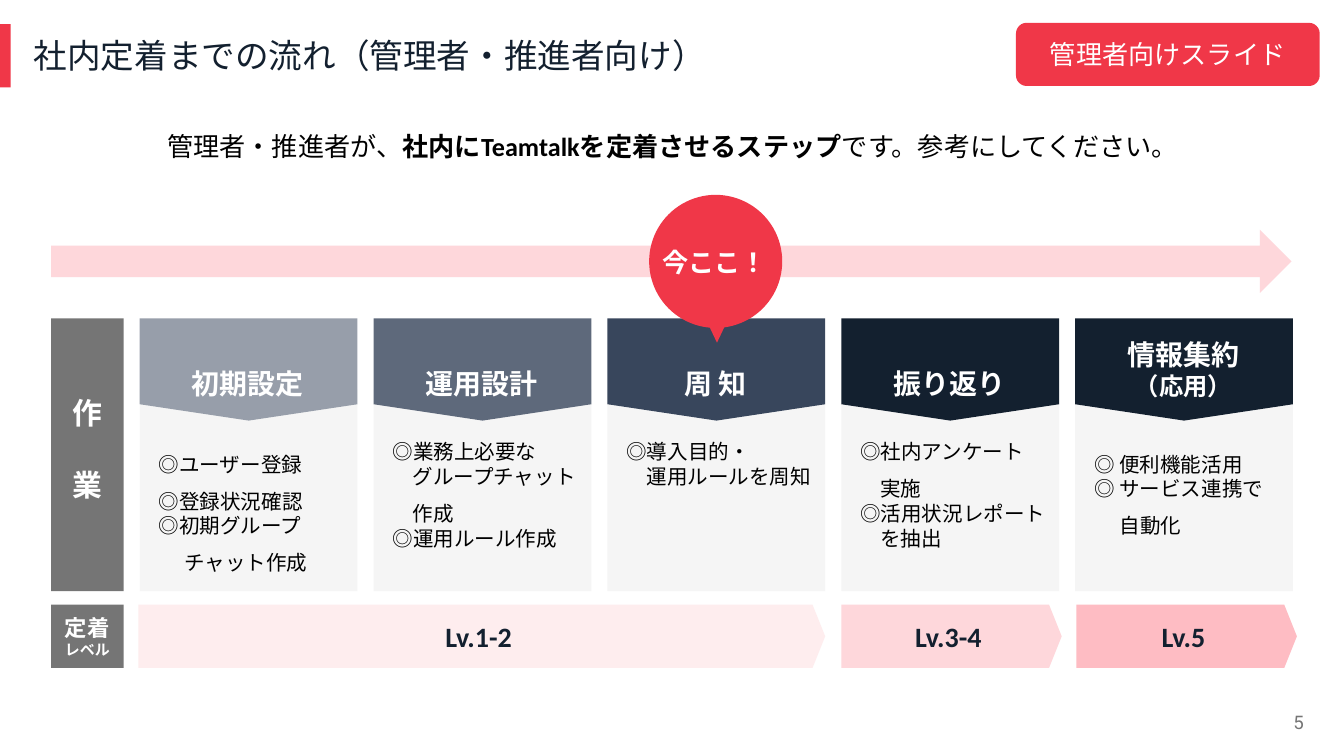
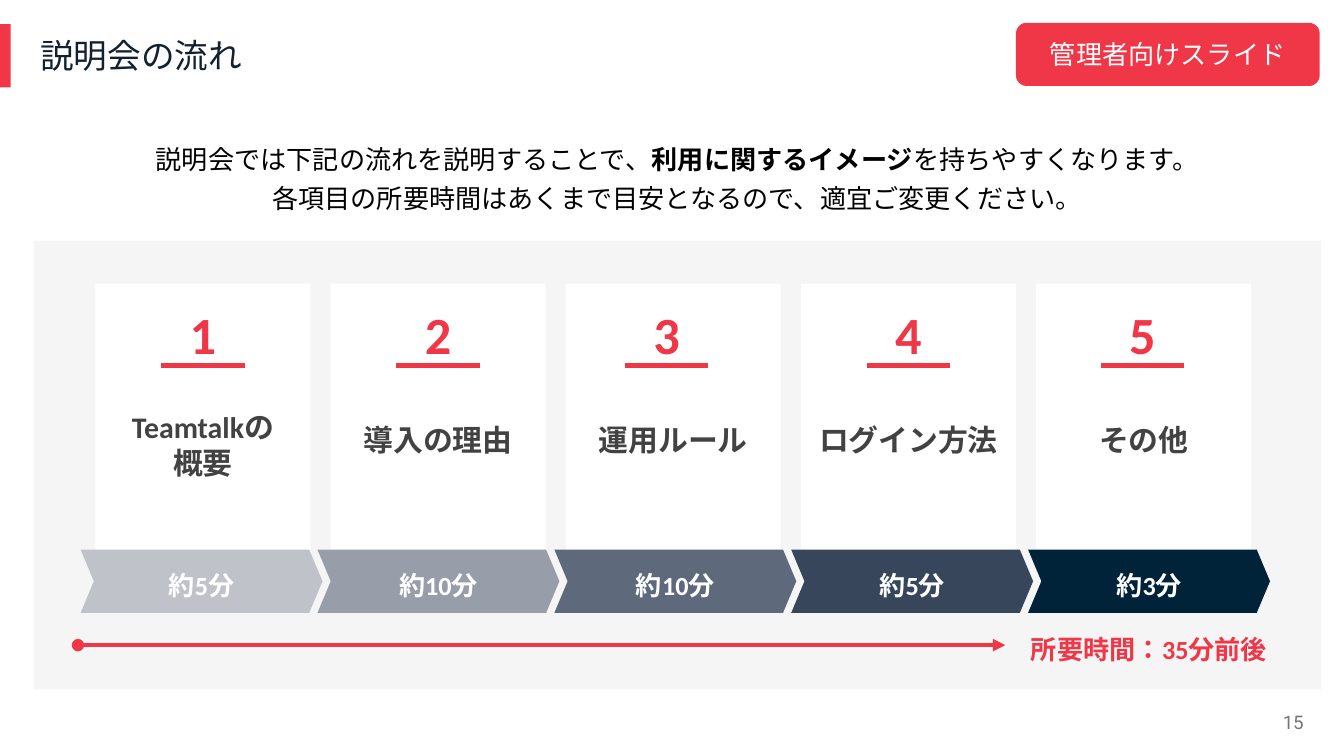
from copy import deepcopy
from dataclasses import dataclass

from lxml.etree import SubElement
from pptx import Presentation
from pptx.dml.color import RGBColor
from pptx.enum.lang import MSO_LANGUAGE_ID as Language
from pptx.enum.shapes import MSO_CONNECTOR as Connector, MSO_SHAPE as Shape
from pptx.enum.text import MSO_ANCHOR as Anchor, PP_ALIGN as Align
from pptx.oxml.ns import qn
from pptx.util import Inches, Pt


@dataclass(frozen=True)
class Theme:
    font: str = "Calibri"
    number_font: str = "Roboto"
    red: str = "F03748"
    navy: str = "13202F"
    deep_navy: str = "002339"
    slate: str = "38465C"
    steel: str = "5E697B"
    mist: str = "979EAA"
    pale: str = "BFC2C8"
    gray: str = "757575"
    charcoal: str = "424242"
    panel: str = "F5F5F5"
    pink_light: str = "FEEDEE"
    pink: str = "FED7DB"
    pink_deep: str = "FEBCC3"
    white: str = "FFFFFF"
    black: str = "000000"
    title: float = 18
    label: float = 16
    heading: float = 15
    body: float = 14
    sub_heading: float = 13
    level: float = 12
    task: float = 11
    page_number: float = 10
    small: float = 8
    number: float = 28


THEME = Theme()
EVEN = (0.1, 0.1, 0.1, 0.1)
FLAT = (0.1, 0.05, 0.1, 0.05)
NONE = (0, 0, 0, 0)


@dataclass(frozen=True)
class Line:
    spans: tuple
    spacing: float = 1
    indent: float = 0
    hanging: float = 0
    before: float = 0


@dataclass(frozen=True)
class Span:
    text: str
    bold: bool = None
    size: float = None


def add_span(para, text, size, color, bold, font):
    for index, piece in enumerate(text.split("\n")):
        if index:
            para.add_line_break()
            para._p[-1].append(deepcopy(para._p[-2].find(qn("a:rPr"))))
        if not piece:
            continue
        span = para.add_run()
        span.text = piece
        span.font.size = Pt(size)
        span.font.bold = bold
        span.font.name = font
        span.font.language_id = Language.JAPANESE
        span.font.color.rgb = RGBColor.from_string(color)
        SubElement(span._r.rPr, qn("a:ea"), typeface=font)


def write(box, text, size=THEME.body, color=THEME.black, bold=False, font=THEME.font,
          align=Align.CENTER, anchor=Anchor.TOP, insets=EVEN, spacing=1):
    frame = box.text_frame
    frame.word_wrap = True
    frame.vertical_anchor = anchor
    frame.margin_left, frame.margin_top, frame.margin_right, frame.margin_bottom = map(Inches, insets)
    lines = [Line((Span(text),), spacing)] if isinstance(text, str) else text
    for index, line in enumerate(lines):
        para = frame.add_paragraph() if index else frame.paragraphs[0]
        para.alignment = align
        para.line_spacing = line.spacing
        if line.before:
            para.space_before = Pt(line.before)
        if line.indent or line.hanging:
            properties = para._p.get_or_add_pPr()
            properties.set("marL", str(Inches(line.indent + line.hanging)))
            properties.set("indent", str(-Inches(line.hanging)))
        for span in line.spans:
            add_span(para, span.text, span.size or size, color,
                     bold if span.bold is None else span.bold, font)


def add_text(page, left, top, width, height, text, **style):
    box = page.shapes.add_textbox(*map(Inches, (left, top, width, height)))
    write(box, text, **style)


def add_block(page, left, top, width, height, fill, kind=Shape.RECTANGLE,
              adjust=None, rotation=0, text=None, **style):
    block = page.shapes.add_shape(kind, *map(Inches, (left, top, width, height)))
    block.shadow.inherit = False
    block.fill.solid()
    block.fill.fore_color.rgb = RGBColor.from_string(fill)
    block.line.fill.background()
    block.rotation = rotation
    if adjust is not None:
        block.adjustments[0] = adjust
    if text:
        write(block, text, **style)


def add_rule(page, left, right, top, ends=()):
    rule = page.shapes.add_connector(
        Connector.STRAIGHT, Inches(left), Inches(top), Inches(right), Inches(top))
    rule.line.color.rgb = RGBColor.from_string(THEME.red)
    rule.line.width = Pt(2.25)
    for tag, kind in ends:
        SubElement(rule.line._get_or_add_ln(), qn(tag), type=kind)
    SubElement(rule._element.spPr, qn("a:effectLst"))


def add_page(deck, title, title_left, number):
    page = deck.slides.add_slide(deck.slide_layouts[6])
    add_block(page, 0, 0.18, 0.08, 0.47, THEME.red)
    add_text(page, title_left, 0.26, 9.32, 0.3, title, size=THEME.title,
             color=THEME.navy, align=Align.LEFT, insets=NONE)
    add_text(page, 9.1, 5.31, 0.6, 0.15, number, size=THEME.page_number, color=THEME.gray,
             font=THEME.number_font, align=Align.RIGHT, anchor=Anchor.MIDDLE,
             insets=NONE, spacing=0.9)
    add_block(page, 7.56, 0.17, 2.26, 0.47, THEME.red, Shape.ROUNDED_RECTANGLE, 0.17,
              text="管理者向けスライド", color=THEME.white, anchor=Anchor.MIDDLE)
    return page


def task(text, spacing=1, indent=0, hanging=0):
    return Line((Span(text),), spacing, indent, hanging)


def add_step(page, left, heading, fill, tasks):
    add_block(page, left, 2.9, 1.62, 1.5, THEME.panel, text=tasks, size=THEME.task,
              align=Align.LEFT, insets=(0.14, 0.37, 0.1, 0.1))
    add_block(page, left + 0.43, 1.94, 0.76, 1.62, fill, Shape.PENTAGON, 0.16, rotation=90)
    two_rows = not isinstance(heading, str)
    top, height = (2.41, 0.67) if two_rows else (2.5, 0.45)
    add_text(page, left - 0.01, top, 1.63, height, heading, size=THEME.heading,
             color=THEME.white, bold=True, spacing=1.5)


def add_here_marker(page):
    add_block(page, 4.83, 1.45, 0.99, 0.99, THEME.red, Shape.OVAL)
    add_block(page, 5.25, 2.37, 0.17, 0.18, THEME.red, Shape.FLOWCHART_MERGE)
    add_text(page, 4.83, 1.73, 1.33, 0.44, "今ここ！", color=THEME.white, bold=True,
             align=Align.LEFT)


def build_adoption_page(deck):
    page = add_page(deck, "社内定着までの流れ（管理者・推進者向け）", 0.25, "5")
    add_text(page, 0.76, 0.87, 8.49, 0.44, [Line((
        Span("管理者・推進者が、"),
        Span("社内にTeamtalkを定着させるステップ", bold=True),
        Span("です。参考にしてください。")))])
    add_block(page, 0.38, 1.71, 9.23, 0.47, THEME.pink, Shape.RIGHT_ARROW)
    add_block(page, 0.38, 2.37, 0.54, 2.03, THEME.gray)
    add_text(page, 0.44, 2.84, 0.45, 1.01, [Line((Span("作"),)), Line((Span("業"),), before=19)],
             size=THEME.label, color=THEME.white, bold=True, align=Align.LEFT)

    steps = [
        ("初期設定", THEME.mist, [
            task("◎ユーザー登録", 1.5), task("◎登録状況確認", 1.5),
            task("◎初期グループ"), task("チャット作成", 1.5, indent=0.19)]),
        ("運用設計", THEME.steel, [
            task("◎業務上必要な"), task("グループチャット", indent=0.15),
            task("作成", 1.5, indent=0.15), task("◎運用ルール作成")]),
        ("周 知", THEME.slate, [task("◎導入目的・\n運用ルールを周知", hanging=0.15)]),
        ("振り返り", THEME.navy, [
            task("◎社内アンケート"), task("実施", 1.5, indent=0.15),
            task("◎活用状況レポート\nを抽出", hanging=0.15)]),
        ([Line((Span("情報集約\n"), Span("（応用）", size=THEME.sub_heading)))], THEME.navy, [
            task("◎ 便利機能活用", 1.5), task("◎ サービス連携で"),
            task("自動化", 1.5, indent=0.19)]),
    ]
    for index, step in enumerate(steps):
        add_step(page, 1.04 + 1.74 * index, *step)
    add_here_marker(page)

    add_block(page, 0.38, 4.5, 0.54, 0.47, THEME.gray,
              text=[Line((Span("定着\n"), Span("レベル", size=THEME.small)))],
              size=THEME.level, color=THEME.white, bold=True, anchor=Anchor.MIDDLE)
    levels = [
        (1.03, 5.11, THEME.pink_light, "Lv.1-2"),
        (6.26, 1.64, THEME.pink, "Lv.3-4"),
        (8.01, 1.64, THEME.pink_deep, "Lv.5"),
    ]
    for left, width, fill, text in levels:
        add_block(page, left, 4.5, width, 0.47, fill, Shape.PENTAGON, 0.2, text=text,
                  size=THEME.heading, color=THEME.navy, bold=True, anchor=Anchor.MIDDLE)


def add_card(page, index, label, number_left):
    left = 0.71 + 1.75 * index
    add_block(page, left, 2.11, 1.6, 2.01, THEME.white)
    top, height = (2.99, 0.67) if len(label) > 1 else (3.09, 0.47)
    add_text(page, left - 0.11, top, 1.82, height, [Line((Span(row),)) for row in label],
             size=THEME.label, color=THEME.charcoal, bold=True, insets=FLAT)
    add_text(page, number_left, 2.2, 0.6, 0.47, str(index + 1), size=THEME.number,
             color=THEME.red, bold=True, insets=FLAT)
    add_rule(page, number_left - 0.01, number_left + 0.61, 2.72)


def add_duration(page, index, duration, fill):
    left = 0.6 + 7.05 / 4 * index
    add_block(page, left, 4.09, 1.8, 0.47, fill, Shape.CHEVRON, 0.21)
    add_text(page, left + 0.24, 4.1, 1.32, 0.47, duration, color=THEME.white, bold=True,
             anchor=Anchor.MIDDLE, spacing=1.15)


def build_briefing_page(deck):
    page = add_page(deck, "説明会の流れ", 0.3, "15")
    add_block(page, 0.25, 1.79, 9.58, 3.34, THEME.panel)
    add_text(page, 0.58, 0.91, 8.92, 0.73, [
        Line((Span("説明会では下記の流れを説明することで、"),
              Span("利用に関するイメージ", bold=True),
              Span("を持ちやすくなります。")), 1.25),
        Line((Span("各項目の所要時間はあくまで目安となるので、適宜ご変更ください。"),), 1.25)])

    topics = [
        (("Teamtalkの", "概要"), 1.21, "約5分", THEME.pale),
        (("導入の理由",), 2.96, "約10分", THEME.mist),
        (("運用ルール",), 4.66, "約10分", THEME.steel),
        (("ログイン方法",), 6.46, "約5分", THEME.slate),
        (("その他",), 8.2, "約3分", THEME.deep_navy),
    ]
    for index, (label, number_left, duration, fill) in enumerate(topics):
        add_card(page, index, label, number_left)
        add_duration(page, index, duration, fill)
    add_rule(page, 0.58, 7.48, 4.8, [("a:headEnd", "oval"), ("a:tailEnd", "triangle")])
    add_text(page, 7.3, 4.56, 2.5, 0.47, "所要時間：35分前後", color=THEME.red, bold=True,
             anchor=Anchor.MIDDLE, insets=(0.1, 0.14, 0.1, 0.1), spacing=1.15)


def main():
    deck = Presentation()
    deck.slide_width = Inches(10)
    deck.slide_height = deck.slide_width * 9 // 16
    build_adoption_page(deck)
    build_briefing_page(deck)
    deck.save("out.pptx")


if __name__ == "__main__":
    main()
